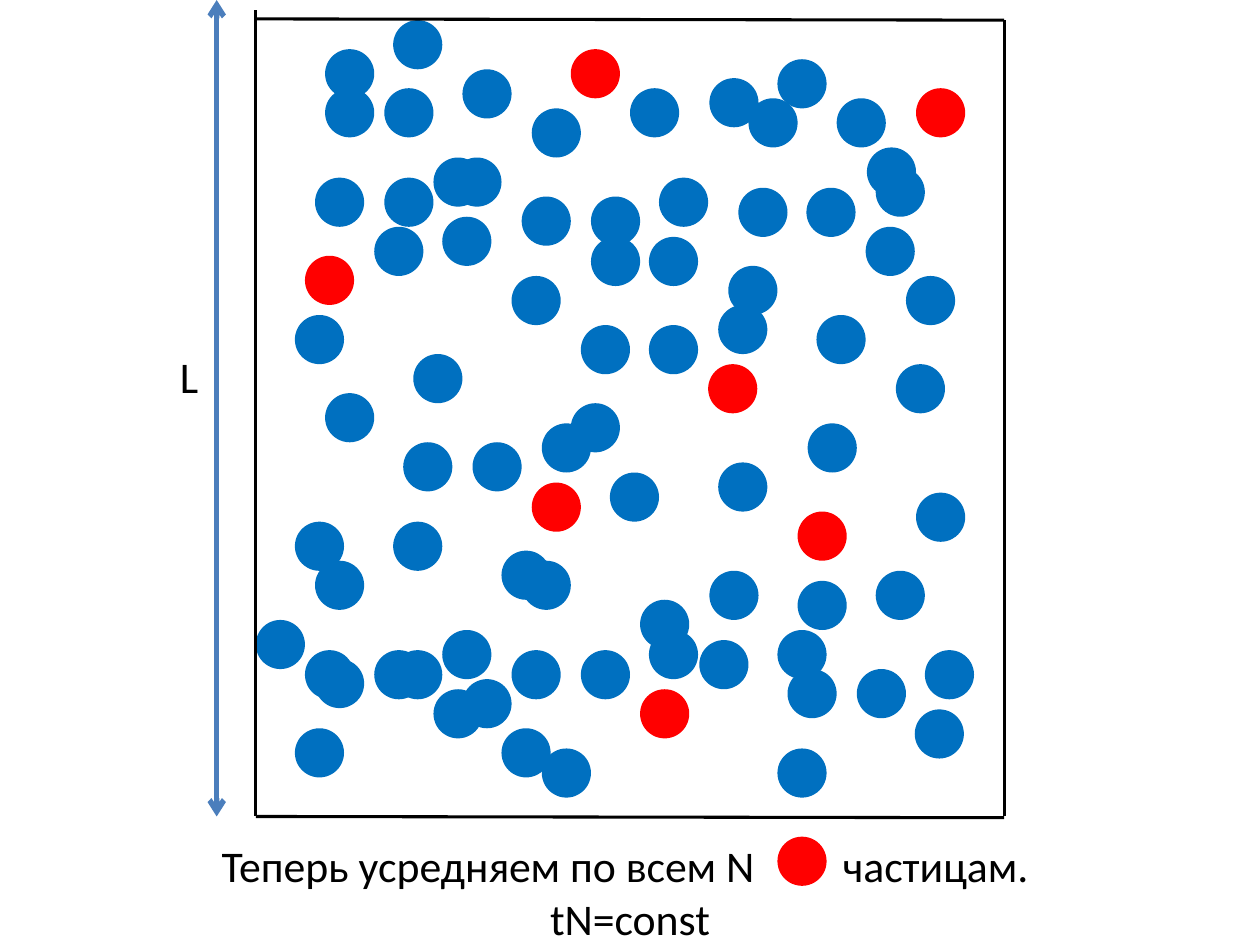
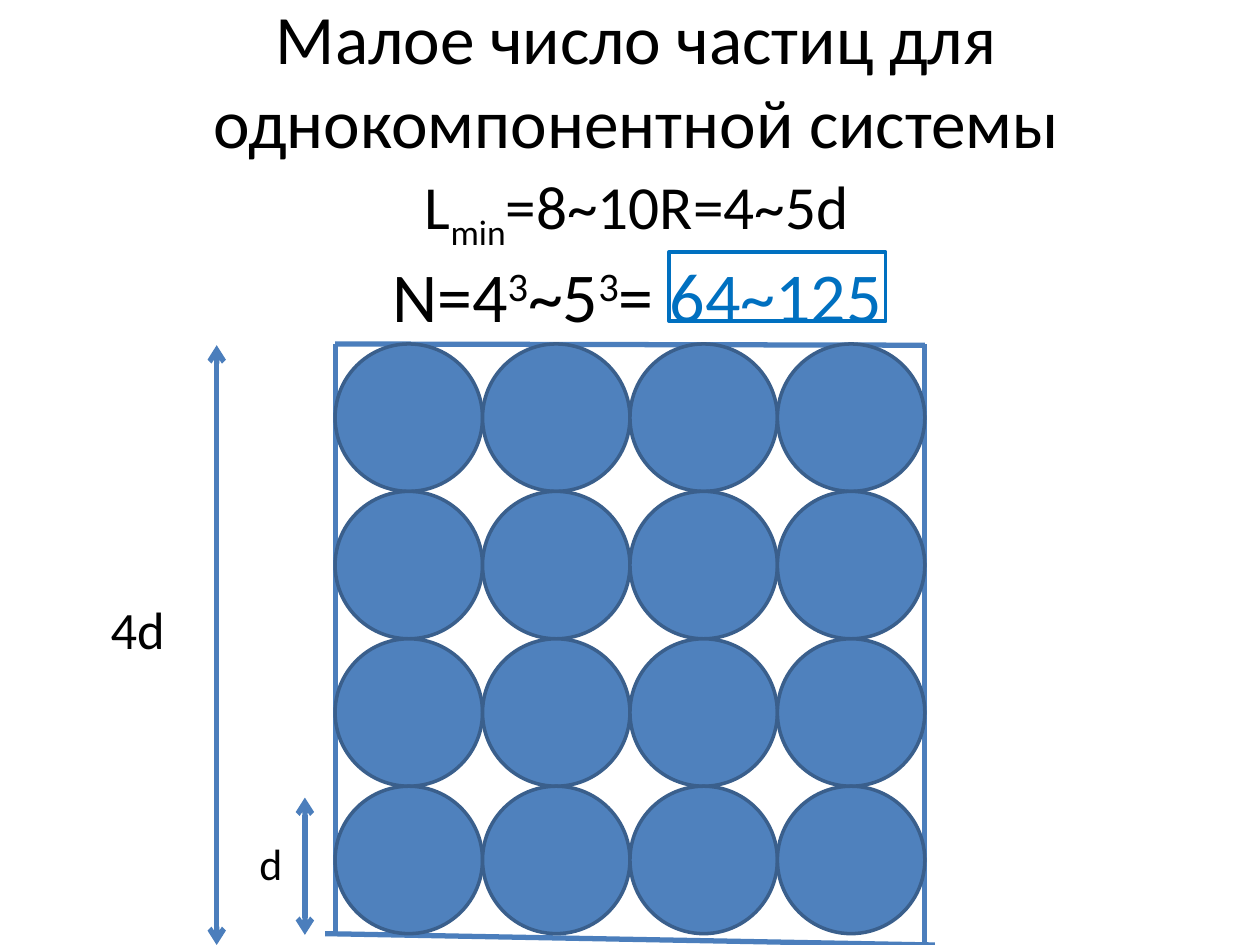
from itertools import product
from typing import NamedTuple, Optional

from lxml.etree import SubElement
from pptx import Presentation
from pptx.dml.color import RGBColor
from pptx.enum.shapes import MSO_CONNECTOR, MSO_SHAPE
from pptx.enum.text import MSO_ANCHOR, PP_ALIGN
from pptx.oxml.ns import qn
from pptx.util import Inches, Pt

BLACK = RGBColor(0x00, 0x00, 0x00)
BLUE = RGBColor(0x00, 0x70, 0xC0)
RED = RGBColor(0xFF, 0x00, 0x00)
DISC_FILL = RGBColor(0x4F, 0x81, 0xBD)
DISC_EDGE = RGBColor(0x3A, 0x5F, 0x8C)
STEEL = RGBColor(0x4B, 0x7E, 0xBC)
FONT = "Calibri"

PARTICLE_SIZE = 0.39
DISC_SIZE = 1.17
DISCS_PER_SIDE = 4
DISCS_LEFT, DISCS_TOP = 2.66, 2.73

# Particles by row: top edge -> left edges, in inches
BLUE_ROWS = {
    0.16: [3.12], 0.39: [2.58], 0.47: [6.17], 0.55: [3.67], 0.62: [5.63],
    0.70: [2.58, 3.05, 5.0], 0.78: [5.94, 6.64], 0.86: [4.22],
    1.17: [6.88], 1.25: [3.44, 3.59], 1.33: [6.95], 1.41: [2.5, 3.05, 5.23],
    1.49: [5.86, 6.4], 1.56: [4.14, 4.69], 1.72: [3.51], 1.80: [2.97, 6.87],
    1.88: [4.69, 5.15], 2.11: [5.78], 2.19: [4.06, 7.19], 2.42: [5.7],
    2.50: [2.34, 6.48], 2.58: [4.61, 5.15], 2.81: [3.28], 2.89: [7.11],
    3.12: [2.58], 3.20: [4.53], 3.36: [4.3, 6.41], 3.51: [3.2, 3.75],
    3.67: [5.7], 3.75: [4.84], 3.91: [7.27], 4.14: [2.34, 3.12],
    4.37: [3.98], 4.45: [2.5, 4.14], 4.53: [5.63, 6.95], 4.61: [6.33],
    4.76: [5.08], 4.92: [2.03], 5.00: [3.51, 5.15, 6.17], 5.08: [5.55],
    5.16: [2.42, 2.97, 3.12, 4.06, 4.61, 7.34], 5.23: [2.5],
    5.31: [6.25, 6.8], 5.39: [3.67], 5.47: [3.44], 5.63: [7.26],
    5.78: [2.34, 3.98], 5.94: [4.3, 6.17],
}
RED_ROWS = {
    0.39: [4.53], 0.70: [7.27], 2.03: [2.42], 2.89: [5.62],
    3.83: [4.22], 4.06: [6.33], 5.47: [5.08],
    6.64: [6.17],  # stands in the caption
}


class Span(NamedTuple):
    text: str
    size: float
    color: RGBColor = BLACK
    baseline: int = 0  # percent of the size, negative for a subscript


class Paragraph(NamedTuple):
    spans: list[Span]
    align: PP_ALIGN = PP_ALIGN.CENTER
    tab: Optional[float] = None


class Area(NamedTuple):
    left: float
    top: float
    width: float
    height: float


class Segment(NamedTuple):
    x1: float
    y1: float
    x2: float
    y2: float


BOX_WALLS = [
    Segment(7.97, 0.16, 7.97, 6.48),
    Segment(7.97, 6.49, 2.03, 6.48),
    Segment(2.03, 0.08, 2.03, 6.48),
    Segment(7.97, 0.16, 2.03, 0.15),
]
CELL_WALLS = [
    Segment(2.58, 7.41, 7.42, 7.5),
    Segment(2.66, 7.42, 2.66, 2.73),
    Segment(7.34, 7.5, 7.34, 2.73),
    Segment(2.66, 2.73, 7.34, 2.74),
]


def add_figure(page, kind: MSO_SHAPE, area: Area, fill: Optional[RGBColor] = None,
               edge: Optional[RGBColor] = None) -> None:
    figure = page.shapes.add_shape(kind, *map(Inches, area))
    figure.shadow.inherit = False
    for part, color in ((figure.fill, fill), (figure.line.fill, edge)):
        if color is None:
            part.background()
        else:
            part.solid()
            part.fore_color.rgb = color
    if edge is not None:
        figure.line.width = Pt(2)


def add_line(page, segment: Segment, color: RGBColor = STEEL, width: float = 3,
             arrows: bool = False) -> None:
    line = page.shapes.add_connector(MSO_CONNECTOR.STRAIGHT, *map(Inches, segment))
    line.line.color.rgb = color
    line.line.width = Pt(width)
    properties = line.line._get_or_add_ln()
    if arrows:
        for end in ("a:headEnd", "a:tailEnd"):
            SubElement(properties, qn(end), type="arrow")
    SubElement(line._element.spPr, qn("a:effectLst"))


def add_text(page, area: Area, paragraphs: list[Paragraph], **frame_format) -> None:
    """Add a text box; frame_format holds text frame attributes."""
    frame = page.shapes.add_textbox(*map(Inches, area)).text_frame
    for name, value in ({"word_wrap": True} | frame_format).items():
        setattr(frame, name, value)
    for index, content in enumerate(paragraphs):
        para = frame.add_paragraph() if index else frame.paragraphs[0]
        para.alignment = content.align
        if content.tab is not None:
            stops = SubElement(para._p.get_or_add_pPr(), qn("a:tabLst"))
            SubElement(stops, qn("a:tab"), pos=str(Inches(content.tab)), algn="l")
        for span in content.spans:
            run = para.add_run()
            run.text = span.text
            font_format = {"name": FONT, "size": Pt(span.size)}
            for name, value in font_format.items():
                setattr(run.font, name, value)
            run.font.color.rgb = span.color
            if span.baseline:
                run.font._element.set("baseline", str(span.baseline * 1000))


def add_particles(page, rows: dict[float, list[float]], color: RGBColor) -> None:
    for top, lefts in rows.items():
        for left in lefts:
            area = Area(left, top, PARTICLE_SIZE, PARTICLE_SIZE)
            add_figure(page, MSO_SHAPE.OVAL, area, fill=color)


def build_averaging(page) -> None:
    add_particles(page, BLUE_ROWS, BLUE)
    for wall in BOX_WALLS:
        add_line(page, wall, BLACK, 1.75)
    add_line(page, Segment(1.72, 6.48, 1.72, 0), arrows=True)
    add_text(page, Area(0.62, 2.73, 1.76, 0.52), [Paragraph([Span("L", 25)])])
    caption = Span("Теперь усредняем по всем N\tчастицам.", 25)
    add_text(page, Area(1.76, 6.61, 6.48, 0.94), [
        Paragraph([caption], PP_ALIGN.LEFT, tab=4.93),
        Paragraph([Span("tN=const", 25)]),
    ], margin_left=0, margin_right=0)
    add_particles(page, RED_ROWS, RED)


def build_small_system(page) -> None:
    title = Span("Малое число частиц для однокомпонентной системы", 39.6)
    add_text(page, Area(0.55, 0, 9, 1.25), [Paragraph([title])],
             vertical_anchor=MSO_ANCHOR.MIDDLE)
    add_text(page, Area(2.97, 1.29, 4.17, 1.36), [
        Paragraph([Span("L", 35), Span("min", 35, baseline=-25),
                   Span("=8~10R=4~5d", 35)]),
        Paragraph([Span("N=4", 40), Span("3", 40, baseline=30),
                   Span("~5", 40), Span("3", 40, baseline=30),
                   Span("= ", 40), Span("64~125", 40, BLUE)]),
    ], word_wrap=False)
    for wall in CELL_WALLS:
        add_line(page, wall)
    for row, column in product(range(DISCS_PER_SIDE), repeat=2):
        area = Area(DISCS_LEFT + column * DISC_SIZE, DISCS_TOP + row * DISC_SIZE,
                    DISC_SIZE, DISC_SIZE)
        add_figure(page, MSO_SHAPE.OVAL, area, DISC_FILL, DISC_EDGE)
    add_line(page, Segment(2.42, 7.42, 2.42, 6.33), arrows=True)
    add_line(page, Segment(1.72, 7.5, 1.72, 2.74), arrows=True)
    for area, label in ((Area(1.96, 6.59, 0.39, 0.52), Span("d", 25)),
                        (Area(0.78, 4.69, 0.64, 0.61), Span("4d", 30))):
        add_text(page, area, [Paragraph([label], PP_ALIGN.LEFT)], word_wrap=False)
    add_figure(page, MSO_SHAPE.RECTANGLE, Area(5.31, 2, 1.72, 0.55), edge=BLUE)


def main() -> None:
    deck = Presentation()
    deck.slide_width, deck.slide_height = Inches(10), Inches(7.5)
    blank = deck.slide_layouts[6]
    for build in (build_averaging, build_small_system):
        build(deck.slides.add_slide(blank))
    deck.save("out.pptx")


if __name__ == "__main__":
    main()
